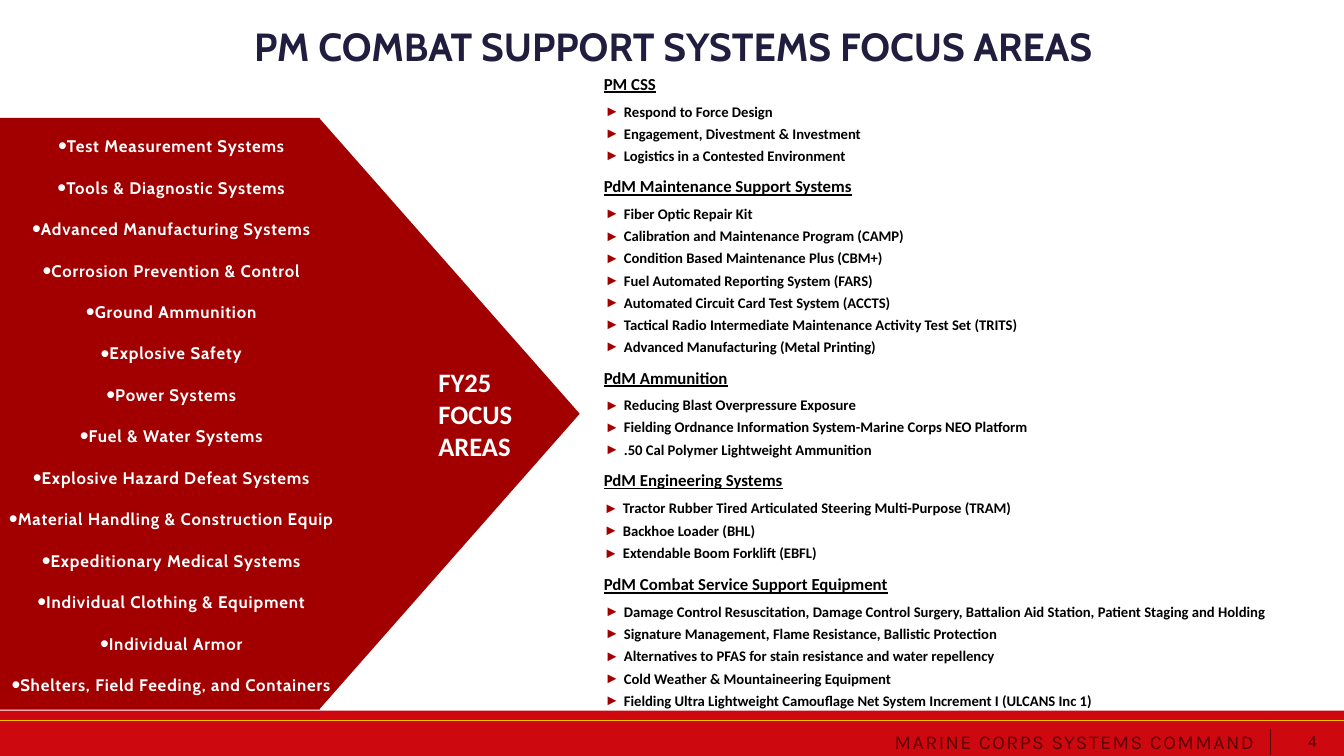
from lxml.etree import SubElement
from pptx import Presentation
from pptx.dml.color import RGBColor
from pptx.enum.shapes import MSO_CONNECTOR, MSO_SHAPE
from pptx.enum.text import MSO_ANCHOR, PP_ALIGN
from pptx.oxml.ns import qn
from pptx.util import Emu, Pt

SCALE = 9144  # EMU per px, 100 px to the inch
WIDE, HIGH = 1333, 750

WHITE = RGBColor(0xFF, 0xFF, 0xFF)
BLACK = RGBColor(0, 0, 0)
NAVY = RGBColor(0x21, 0x1D, 0x3E)
RED = RGBColor(0xCE, 0x08, 0x0F)
DARK = RGBColor(0xA2, 0, 0)
MAROON = RGBColor(0x5C, 0, 0)
GOLD = RGBColor(0xFF, 0xC0, 0)

SYSTEMS = [
    "Test Measurement Systems",
    "Tools & Diagnostic Systems",
    "Advanced Manufacturing Systems",
    "Corrosion Prevention & Control",
    "Ground Ammunition",
    "Explosive Safety",
    "Power Systems",
    "Fuel & Water Systems",
    "Explosive Hazard Defeat Systems",
    "Material Handling & Construction Equip",
    "Expeditionary Medical Systems",
    "Individual Clothing & Equipment",
    "Individual Armor",
    "Shelters, Field Feeding, and Containers",
]

# Heading, line spacing and indent of its items, items
GROUPS = [
    ("PM CSS", Pt(11), 20, [
        "Respond to Force Design",
        "Engagement, Divestment & Investment",
        "Logistics in a Contested Environment",
    ]),
    ("PdM Maintenance Support Systems", Pt(11), 20, [
        "Fiber Optic Repair Kit",
        "Calibration and Maintenance Program (CAMP)",
        "Condition Based Maintenance Plus (CBM+)",
        "Fuel Automated Reporting System (FARS)",
        "Automated Circuit Card Test System (ACCTS)",
        "Tactical Radio Intermediate Maintenance Activity Test Set (TRITS)",
        "Advanced Manufacturing (Metal Printing)",
    ]),
    ("PdM Ammunition", Pt(11), 20, [
        "Reducing Blast Overpressure Exposure",
        "Fielding Ordnance Information System-Marine Corps NEO Platform",
        ".50 Cal Polymer Lightweight Ammunition",
    ]),
    ("PdM Engineering Systems", 0.9, 19, [
        "Tractor Rubber Tired Articulated Steering Multi-Purpose (TRAM)",
        "Backhoe Loader (BHL)",
        "Extendable Boom Forklift (EBFL)",
    ]),
    ("PdM Combat Service Support Equipment", Pt(11), 20, [
        "Damage Control Resuscitation, Damage Control Surgery, "
        "Battalion Aid Station, Patient Staging and Holding",
        "Signature Management, Flame Resistance, Ballistic Protection",
        "Alternatives to PFAS for stain resistance and water repellency",
        "Cold Weather & Mountaineering Equipment",
        "Fielding Ultra Lightweight Camouflage Net System Increment I (ULCANS Inc 1)",
    ]),
]


def px(*vals):
    return [Emu(v * SCALE) for v in vals]


class Board:
    def __init__(self, slide):
        self.shapes = slide.shapes

    def block(self, kind, box, fill):
        shape = self.shapes.add_shape(kind, *px(*box))
        shape.shadow.inherit = False
        shape.fill.solid()
        shape.fill.fore_color.rgb = fill
        shape.line.fill.background()

    def rule(self, ends, color, width):
        line = self.shapes.add_connector(MSO_CONNECTOR.STRAIGHT, *px(*ends))
        line.line.color.rgb = color
        line.line.width = Pt(width)
        SubElement(line._element.spPr, qn("a:effectLst"))

    def text(self, box, words, size, face, color, bold=True,
             align=PP_ALIGN.LEFT, inset=(10, 5), anchor=MSO_ANCHOR.TOP, gap=0):
        frame = self.shapes.add_textbox(*px(*box)).text_frame
        frame.word_wrap = True
        frame.vertical_anchor = anchor
        frame.margin_left, frame.margin_top = px(*inset)
        frame.margin_right, frame.margin_bottom = px(*inset)
        frame.text = words
        for para in frame.paragraphs:
            para.alignment = align
            for run in para.runs:
                font = run.font
                font.name, font.size, font.bold = face, Pt(size), bold
                font.color.rgb = color
                if gap:
                    run._r.get_or_add_rPr().set("spc", str(gap))
        return frame.paragraphs

    def bullet(self, para, char, color, percent, left=0, hang=0):
        props = para._p.get_or_add_pPr()
        props.set("marL", str(left * SCALE))
        props.set("indent", str(-hang * SCALE))
        tint = SubElement(props, qn("a:buClr"))
        SubElement(tint, qn("a:srgbClr"), val=str(color))
        SubElement(props, qn("a:buSzPct"), val=str(percent * 1000))
        SubElement(props, qn("a:buFont"), typeface="Arial")
        SubElement(props, qn("a:buChar"), char=char)


def main():
    deck = Presentation()
    deck.slide_width, deck.slide_height = px(WIDE, HIGH)
    board = Board(deck.slides.add_slide(deck.slide_layouts[6]))

    # Footer band
    board.block(MSO_SHAPE.RECTANGLE, (0, 705, WIDE, HIGH - 705), RED)
    board.rule((0, 715, WIDE, 715), GOLD, 0.5)
    board.rule((1260, 723, 1260, 749), MAROON, 0.25)
    number = board.text((1266, 729, 40, 15), "4", 11, "Roboto", MAROON, False,
                        PP_ALIGN.RIGHT, (0, 0), MSO_ANCHOR.MIDDLE)
    number[0].line_spacing = 0.9
    board.text((680, 719, 574, 31), "MARINE CORPS SYSTEMS COMMAND", 14, "Karla",
               MAROON, False, PP_ALIGN.RIGHT, gap=100)

    # Title
    title = board.text((252, 29, 1014, 39), "PM COMBAT SUPPORT SYSTEMS FOCUS AREAS",
                       28, "Cabin", NAVY, inset=(0, 0), anchor=MSO_ANCHOR.MIDDLE)
    title[0].line_spacing = 0.9

    # Arrow with the list of systems
    board.block(MSO_SHAPE.RECTANGLE, (0, 117, 317, 587), DARK)
    board.block(MSO_SHAPE.RIGHT_ARROW, (58, 117, 517, 587), DARK)
    paras = board.text((0, 118, 340, 604), "\n".join(SYSTEMS), 12, "Cabin", WHITE,
                       align=PP_ALIGN.CENTER, inset=(5, 7), gap=60)
    for i, para in enumerate(paras):
        board.bullet(para, "•", WHITE, 150)
        para.line_spacing = 1.5
        para.space_before = Pt(8 if i else 0)
    board.text((425, 358, 96, 106), "FY25\nFOCUS AREAS", 19, "Calibri", WHITE)

    # Focus areas by group
    lines = [line for head, _, _, items in GROUPS for line in (head, *items)]
    paras = iter(board.text((589, 68, 687, 619), "\n".join(lines), 10.5,
                            "Calibri", BLACK))
    for i, (_, pitch, left, items) in enumerate(GROUPS):
        head = next(paras)
        head.space_after = Pt(3)
        if i:
            head.space_before = Pt(12)
            head.line_spacing = Pt(11)
        font = head.runs[0].font
        font.size, font.underline = Pt(12), True
        for _ in items:
            item = next(paras)
            board.bullet(item, "►", DARK, 100, left, 19)
            item.line_spacing = pitch
            item.space_before = Pt(4.8)

    deck.save("out.pptx")


if __name__ == "__main__":
    main()
